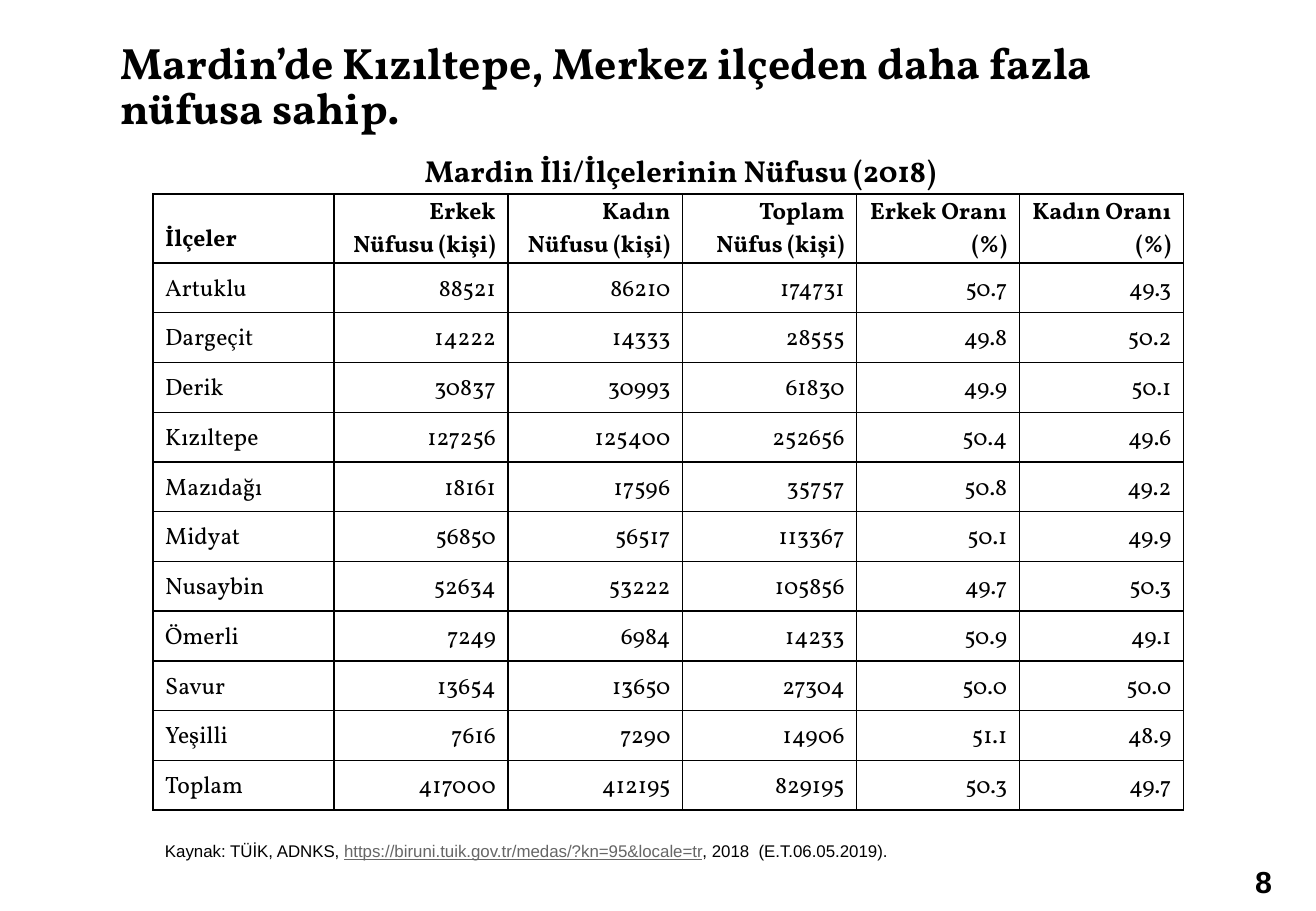
from pptx import Presentation
from pptx.dml.color import RGBColor
from pptx.enum.text import MSO_ANCHOR as Anchor, PP_ALIGN as Align
from pptx.oxml import parse_xml
from pptx.oxml.ns import nsdecls
from pptx.util import Cm, Pt

SERIF, SANS = "Vollkorn", "Arial"
BLACK, GREY = "000000", "666666"

COL_WIDTHS = [3.78, 3.64, 3.65, 3.64, 3.4, 3.43]
HEADER_HEIGHT, ROW_HEIGHT = 1.44, 1.04
HEADERS = ["İlçeler", "Erkek\nNüfusu (kişi)", "Kadın\nNüfusu (kişi)",
           "Toplam\nNüfus (kişi)", "Erkek Oranı\n(%)", "Kadın Oranı\n(%)"]
DISTRICTS = [
    ("Artuklu", "88521", "86210", "174731", "50.7", "49.3"),
    ("Dargeçit", "14222", "14333", "28555", "49.8", "50.2"),
    ("Derik", "30837", "30993", "61830", "49.9", "50.1"),
    ("Kızıltepe", "127256", "125400", "252656", "50.4", "49.6"),
    ("Mazıdağı", "18161", "17596", "35757", "50.8", "49.2"),
    ("Midyat", "56850", "56517", "113367", "50.1", "49.9"),
    ("Nusaybin", "52634", "53222", "105856", "49.7", "50.3"),
    ("Ömerli", "7249", "6984", "14233", "50.9", "49.1"),
    ("Savur", "13654", "13650", "27304", "50.0", "50.0"),
    ("Yeşilli", "7616", "7290", "14906", "51.1", "48.9"),
    ("Toplam", "417000", "412195", "829195", "50.3", "49.7"),
]
SOURCE = [("Kaynak: TÜİK, ADNKS, ", BLACK),
          ("https://biruni.tuik.gov.tr/medas/?kn=95&locale=tr", GREY),
          (", 2018  (E.T.06.05.2019).", BLACK)]


def rgb(value):
    return RGBColor.from_string(value)


def style(r, size, face, bold=False, color=BLACK):
    f = r.font
    f.size, f.name, f.bold = Pt(size), face, bold
    f.color.rgb = rgb(color)


def style_frame(tf, size, face, bold, align):
    for p in tf.paragraphs:
        p.alignment = align
        for r in p.runs:
            style(r, size, face, bold)


def set_insets(tf, inset):
    tf.margin_left = tf.margin_right = Cm(inset)
    tf.margin_top = tf.margin_bottom = Cm(inset)


def add_box(slide, box):
    sp = slide.shapes.add_textbox(*map(Cm, box))
    sp.text_frame.word_wrap = True
    return sp.text_frame


def add_title(slide, box):
    sp = slide.shapes.title
    sp.left, sp.top, sp.width, sp.height = map(Cm, box)
    tf = sp.text_frame
    tf.text = "Mardin’de Kızıltepe, Merkez ilçeden daha fazla nüfusa sahip."
    tf.vertical_anchor = Anchor.TOP
    set_insets(tf, 0)
    style_frame(tf, 26, SERIF, True, Align.LEFT)
    tf.paragraphs[0].line_spacing = 0.87


def add_caption(slide, box):
    tf = add_box(slide, box)
    tf.text = "Mardin İli/İlçelerinin Nüfusu (2018)"
    set_insets(tf, 0)
    style_frame(tf, 18, SERIF, True, Align.CENTER)


def add_borders(cell):
    tc_pr = cell._tc.get_or_add_tcPr()
    for i, side in enumerate(("lnL", "lnR", "lnT", "lnB")):
        tc_pr.insert(i, parse_xml(
            f'<a:{side} {nsdecls("a")} w="{Pt(1)}"><a:solidFill>'
            f'<a:srgbClr val="{BLACK}"/></a:solidFill></a:{side}>'))


def add_population_table(slide, left, top):
    rows = [HEADERS] + DISTRICTS
    height = HEADER_HEIGHT + ROW_HEIGHT * len(DISTRICTS)
    table = slide.shapes.add_table(
        len(rows), len(HEADERS), Cm(left), Cm(top),
        Cm(sum(COL_WIDTHS)), Cm(height)).table
    table.horz_banding = False
    for col, width in zip(table.columns, COL_WIDTHS):
        col.width = Cm(width)
    for i, values in enumerate(rows):
        is_header = i == 0
        table.rows[i].height = Cm(HEADER_HEIGHT if is_header else ROW_HEIGHT)
        for j, value in enumerate(values):
            cell = table.cell(i, j)
            cell.text_frame.text = value
            cell.fill.background()
            cell.vertical_anchor = Anchor.BOTTOM
            if is_header and j:  # two-line headings fill the row
                cell.margin_top = cell.margin_bottom = 0
            style_frame(cell.text_frame, 14, SERIF, is_header,
                        Align.RIGHT if j else Align.LEFT)
            add_borders(cell)


def add_source(slide, box):
    p = add_box(slide, box).paragraphs[0]
    for text, color in SOURCE:
        r = p.add_run()
        r.text = text
        style(r, 10, SANS, color=color)
        r.font.underline = color == GREY


def add_page_number(slide, box):
    tf = add_box(slide, box)
    tf.text = "8"
    set_insets(tf, 0.13)
    style_frame(tf, 18, SANS, True, Align.RIGHT)


def main():
    prs = Presentation()
    prs.slide_width, prs.slide_height = Cm(27.51), Cm(19.05)
    slide = prs.slides.add_slide(prs.slide_layouts[5])
    # Heading and table caption
    add_title(slide, (2.51, 0.89, 23.47, 2.01))
    add_caption(slide, (2.49, 3.18, 23.47, 0.64))
    # District figures
    add_population_table(slide, 3.2, 4.06)
    # Footer
    add_source(slide, (3.2, 17.45, 20.6, 0.69))
    add_page_number(slide, (25.98, 17.91, 0.74, 0.51))
    prs.save("out.pptx")


if __name__ == "__main__":
    main()
